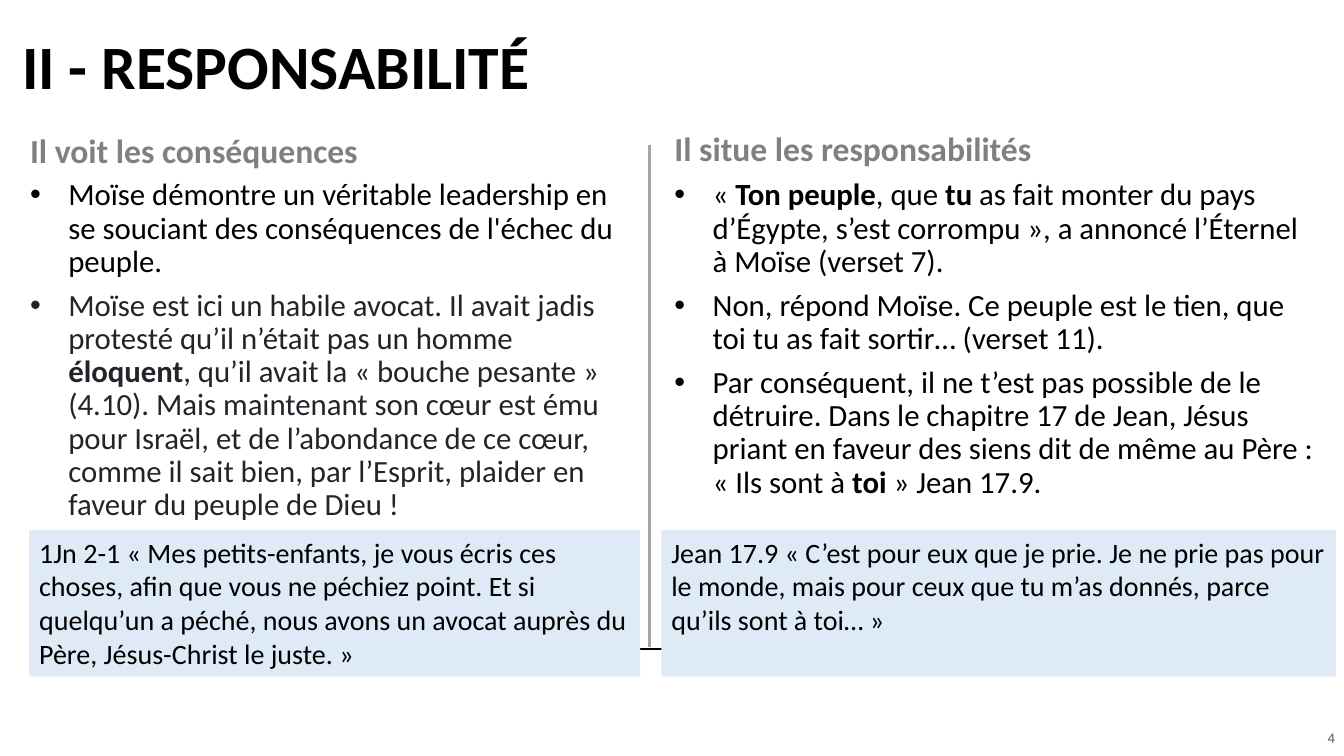
"""Build the slide on responsibility: two columns of points, each with a verse below."""
from lxml import etree
from pptx import Presentation
from pptx.dml.color import RGBColor
from pptx.enum.shapes import MSO_CONNECTOR, MSO_SHAPE
from pptx.enum.text import MSO_ANCHOR, PP_ALIGN
from pptx.oxml.ns import qn
from pptx.util import Inches, Pt

TOP, MIDDLE, BOTTOM = MSO_ANCHOR.TOP, MSO_ANCHOR.MIDDLE, MSO_ANCHOR.BOTTOM
LEFT, RIGHT = PP_ALIGN.LEFT, PP_ALIGN.RIGHT
RECT, STRAIGHT = MSO_SHAPE.RECTANGLE, MSO_CONNECTOR.STRAIGHT
FONT = "Calibri"
BLACK, DARK, GREY, PALE = "000000", "212529", "808080", "DEEBF7"

TITLE = "II - RESPONSABILITÉ"
NUMBER = "4"
COLUMNS = [
    {
        "head": ("Il voit les conséquences", (0.2, 1.29, 4.1, 0.45), 0.8),
        "area": (0.2, 1.73, 6.1, 4.84),
        "points": [
            ("Moïse démontre un véritable leadership en se souciant des "
             "conséquences de l'échec du peuple.", BLACK),
            ("Moïse est ici un habile avocat. Il avait jadis protesté qu’il "
             "n’était pas un homme **éloquent**, qu’il avait la « bouche "
             "pesante » (4.10). Mais maintenant son cœur est ému pour Israël, "
             "et de l’abondance de ce cœur, comme il sait bien, par l’Esprit, "
             "plaider en faveur du peuple de Dieu !", DARK),
        ],
        "verse": ("1Jn 2-1 « Mes petits-enfants, je vous écris ces choses, afin "
                  "que vous ne péchiez point. Et si quelqu’un a péché, nous "
                  "avons un avocat auprès du Père, Jésus-Christ le juste. »"),
        "box": (0.29, 5.26, 6.06, 1.45),
    },
    {
        "head": ("Il situe les responsabilités", (6.59, 1.27, 6.55, 0.45), 0.9),
        "area": (6.59, 1.73, 6.55, 4.58),
        "points": [
            ("« **Ton peuple**, que **tu** as fait monter du pays d’Égypte, "
             "s’est corrompu », a annoncé l’Éternel à Moïse (verset 7).", BLACK),
            ("Non, répond Moïse. Ce peuple est le tien, que toi tu as fait "
             "sortir… (verset 11).", BLACK),
            ("Par conséquent, il ne t’est pas possible de le détruire. Dans "
             "le chapitre 17 de Jean, Jésus priant en faveur des siens dit de "
             "même au Père : « Ils sont à **toi** » Jean 17.9.", BLACK),
        ],
        "verse": ("Jean 17.9 « C’est pour eux que je prie. Je ne prie pas pour "
                  "le monde, mais pour ceux que tu m’as donnés, parce qu’ils "
                  "sont à toi… »"),
        "box": (6.56, 5.26, 6.69, 1.45),
    },
]
RULES = [
    ((0.44, 6.44, 12.83, 6.44), BLACK, 1),
    ((6.44, 6.42, 6.44, 1.44), "A6A6A6", 2.25),
]


def rgb(code):
    return RGBColor.from_string(code)


def place(area):
    return [Inches(n) for n in area]


def style(para, size, color, bold=False, line=1.0, before=0, align=LEFT):
    para.alignment = align
    para.line_spacing = line
    para.space_before = Pt(before)
    for run in para.runs:
        font = run.font
        font.name, font.size = FONT, Pt(size)
        font.color.rgb = rgb(color)
        font.bold = bold


def setup(shape, anchor=TOP):
    frame = shape.text_frame
    frame.word_wrap = True
    frame.vertical_anchor = anchor
    return frame


def write(shape, text, size, color, anchor=TOP, **look):
    frame = setup(shape, anchor)
    frame.text = text
    style(frame.paragraphs[0], size, color, **look)


def add_rule(slide, ends, color, width):
    rule = slide.shapes.add_connector(STRAIGHT, *place(ends))
    rule.line.color.rgb = rgb(color)
    rule.line.width = Pt(width)
    etree.SubElement(rule._element.spPr, qn("a:effectLst"))


def add_bullet(para):
    props = para._p.get_or_add_pPr()
    props.set("marL", str(Inches(0.38)))
    props.set("indent", str(-Inches(0.38)))
    etree.SubElement(props, qn("a:buFont")).set("typeface", "Arial")
    etree.SubElement(props, qn("a:buChar")).set("char", "•")


def add_points(slide, area, points):
    frame = setup(slide.shapes.add_textbox(*place(area)))
    for i, (text, color) in enumerate(points):
        para = frame.add_paragraph() if i else frame.paragraphs[0]
        parts = text.split("**")
        for part in parts:
            para.add_run().text = part
        style(para, 22, color, line=0.9, before=7.5)
        for run in para.runs[1::2]:
            run.font.bold = True
        add_bullet(para)


def add_verse(slide, area, text):
    box = slide.shapes.add_shape(RECT, *place(area))
    box.shadow.inherit = False
    box.fill.solid()
    box.fill.fore_color.rgb = rgb(PALE)
    box.line.fill.background()
    write(box, text, 20, BLACK)


def main():
    deck = Presentation()
    deck.slide_width, deck.slide_height = Inches(13.33), Inches(7.5)
    slide = deck.slides.add_slide(deck.slide_layouts[5])
    shapes = slide.shapes

    title = shapes.title
    title.left, title.top, title.width, title.height = place((0.12, 0.31, 9.68, 0.99))
    write(title, TITLE, 44, BLACK, bold=True, line=0.9)

    for rule in RULES:
        add_rule(slide, *rule)

    for col in COLUMNS:
        head, area, line = col["head"]
        write(shapes.add_textbox(*place(area)), head, 24, GREY, BOTTOM,
              bold=True, line=line, before=7.5)
        add_points(slide, col["area"], col["points"])
        add_verse(slide, col["box"], col["verse"])

    page = shapes.add_textbox(*place((12.93, 7.12, 0.41, 0.4)))
    write(page, NUMBER, 10.5, "595959", MIDDLE, align=RIGHT)
    deck.save("out.pptx")


if __name__ == "__main__":
    main()
